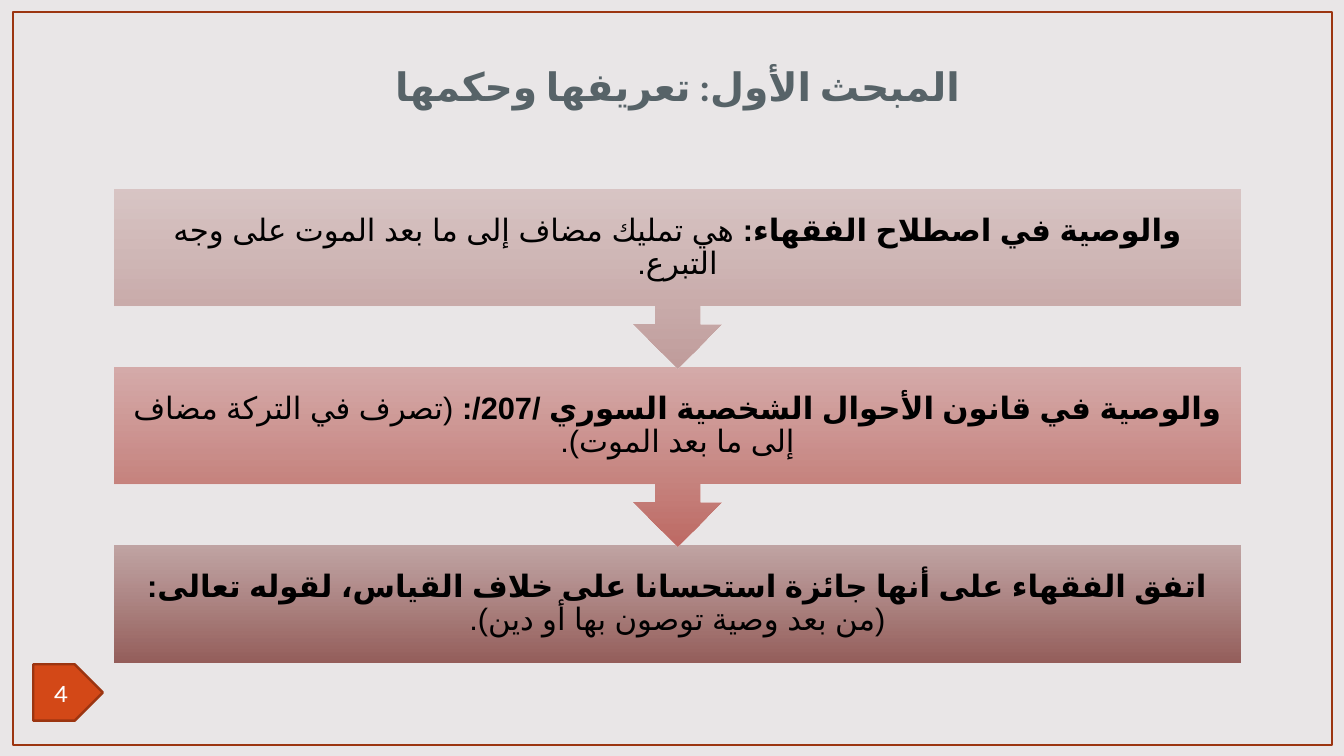
import pptx
import pptx.util
import pptx.dml.color
import pptx.enum.shapes
import pptx.enum.text
import pptx.oxml
import pptx.oxml.ns

Inches, Pt = pptx.util.Inches, pptx.util.Pt
SHAPE = pptx.enum.shapes.MSO_SHAPE
ALIGN = pptx.enum.text.PP_ALIGN
MIDDLE = pptx.enum.text.MSO_ANCHOR.MIDDLE

# Content
LANGUAGE = "ar-SY"
TITLE = "المبحث الأول: تعريفها وحكمها"
PAGE_NUMBER = "4"
STEPS = [  # bold lead, plain text, gradient top and bottom
    ("والوصية في اصطلاح الفقهاء: ",
     "هي تمليك مضاف إلى ما بعد الموت على وجه التبرع.", "D7C2C1", "C19D9C"),
    ("والوصية في قانون الأحوال الشخصية السوري /207/: ",
     "(تصرف في التركة مضاف إلى ما بعد الموت).", "D3A5A3", "BE6A64"),
    ("اتفق الفقهاء على أنها جائزة استحسانا على خلاف القياس، لقوله تعالى: ",
     "(من بعد وصية توصون بها أو دين).", "BC9D9C", "955E5B"),
]

# Look
COLORS = {"background": "E9E6E7", "edge": "9C3511", "tag": "D34817",
          "title": "576368", "text": "000000", "number": "FFFFFF"}
TITLE_FONT = {"name": "Calibri", "size": Pt(28), "bold": True}
STEP_FONT = {"name": "Arial", "size": Pt(22)}
NUMBER_FONT = {"name": "Karla", "size": Pt(18)}

# Layout in inches
WIDTH, HEIGHT = 13.33, 7.5
STEP_LEFT, STEP_TOP, STEP_WIDTH = 1.14, 1.88, 11.16
STEP_PITCH, BOX_HEIGHT, CALLOUT_HEIGHT = 1.765, 1.16, 1.78
STEP_INSET = 0.17


def color(value):
    return pptx.dml.color.RGBColor.from_string(value)


def add_shape(kind, *place):
    shape = page.shapes.add_shape(kind, *map(Inches, place))
    shape.shadow.inherit = False
    return shape


def outline(shape):
    shape.line.color.rgb = color(COLORS["edge"])
    shape.line.width = Pt(1.75)


def write(shape, spans, ink, inset=None, spacing=None, rtl=True):
    """Fill a shape with one centred paragraph of (text, font format) spans."""
    frame = shape.text_frame
    frame.word_wrap = True
    frame.vertical_anchor = MIDDLE
    if inset is not None:
        for side in ("left", "right", "top", "bottom"):
            setattr(frame, f"margin_{side}", Inches(inset))
    para = frame.paragraphs[0]
    para.alignment = ALIGN.CENTER
    para.line_spacing = spacing
    if rtl:
        para._p.get_or_add_pPr().set("rtl", "1")
    for text, look in spans:
        span = para.add_run()
        span.text = text
        span.font.color.rgb = color(ink)
        for name, value in look.items():
            setattr(span.font, name, value)
        if rtl:
            properties = span._r.get_or_add_rPr()
            properties.set("lang", LANGUAGE)
            properties.append(pptx.oxml.parse_xml(
                f'<a:cs {pptx.oxml.ns.nsdecls("a")} typeface="{look["name"]}"/>'))


def shade(shape, top, bottom):
    """Vertical gradient whose first stop is 90% opaque."""
    shape.fill.gradient()
    shape.fill.gradient_angle = 270
    for stop, value in zip(shape.fill.gradient_stops, (top, bottom)):
        stop.color.rgb = color(value)
    first = shape._element.spPr.find(".//" + pptx.oxml.ns.qn("a:srgbClr"))
    first.append(pptx.oxml.parse_xml(
        f'<a:alpha {pptx.oxml.ns.nsdecls("a")} val="90000"/>'))
    shape.line.fill.background()


deck = pptx.Presentation()
deck.slide_width, deck.slide_height = Inches(WIDTH), Inches(HEIGHT)
page = deck.slides.add_slide(deck.slide_layouts[6])

# Background and border
page.background.fill.solid()
page.background.fill.fore_color.rgb = color(COLORS["background"])
border = add_shape(SHAPE.RECTANGLE, 0.13, 0.12, 13.08, 7.27)
border.fill.background()
outline(border)

# Page number tag
tag = add_shape(SHAPE.PENTAGON, 0.33, 6.59, 0.69, 0.56)
tag.fill.solid()
tag.fill.fore_color.rgb = color(COLORS["tag"])
outline(tag)
write(tag, [(PAGE_NUMBER, NUMBER_FONT)], COLORS["number"], inset=0, rtl=False)

# Title
title = page.shapes.add_textbox(*map(Inches, (2.96, 0.31, 7.52, 1.03)))
write(title, [(TITLE, TITLE_FONT)], COLORS["title"], spacing=1.1)

# Steps, drawn from last to first so each arrow overlaps the next box
for index, (lead, rest, top, bottom) in reversed(list(enumerate(STEPS))):
    last = index == len(STEPS) - 1
    step = add_shape(SHAPE.RECTANGLE if last else SHAPE.DOWN_ARROW_CALLOUT,
                     STEP_LEFT, STEP_TOP + index * STEP_PITCH, STEP_WIDTH,
                     BOX_HEIGHT if last else CALLOUT_HEIGHT)
    shade(step, top, bottom)
    write(step, [(lead, {**STEP_FONT, "bold": True}),
                 (rest, {**STEP_FONT, "bold": False})],
          COLORS["text"], inset=STEP_INSET, spacing=0.9)

deck.save("out.pptx")
